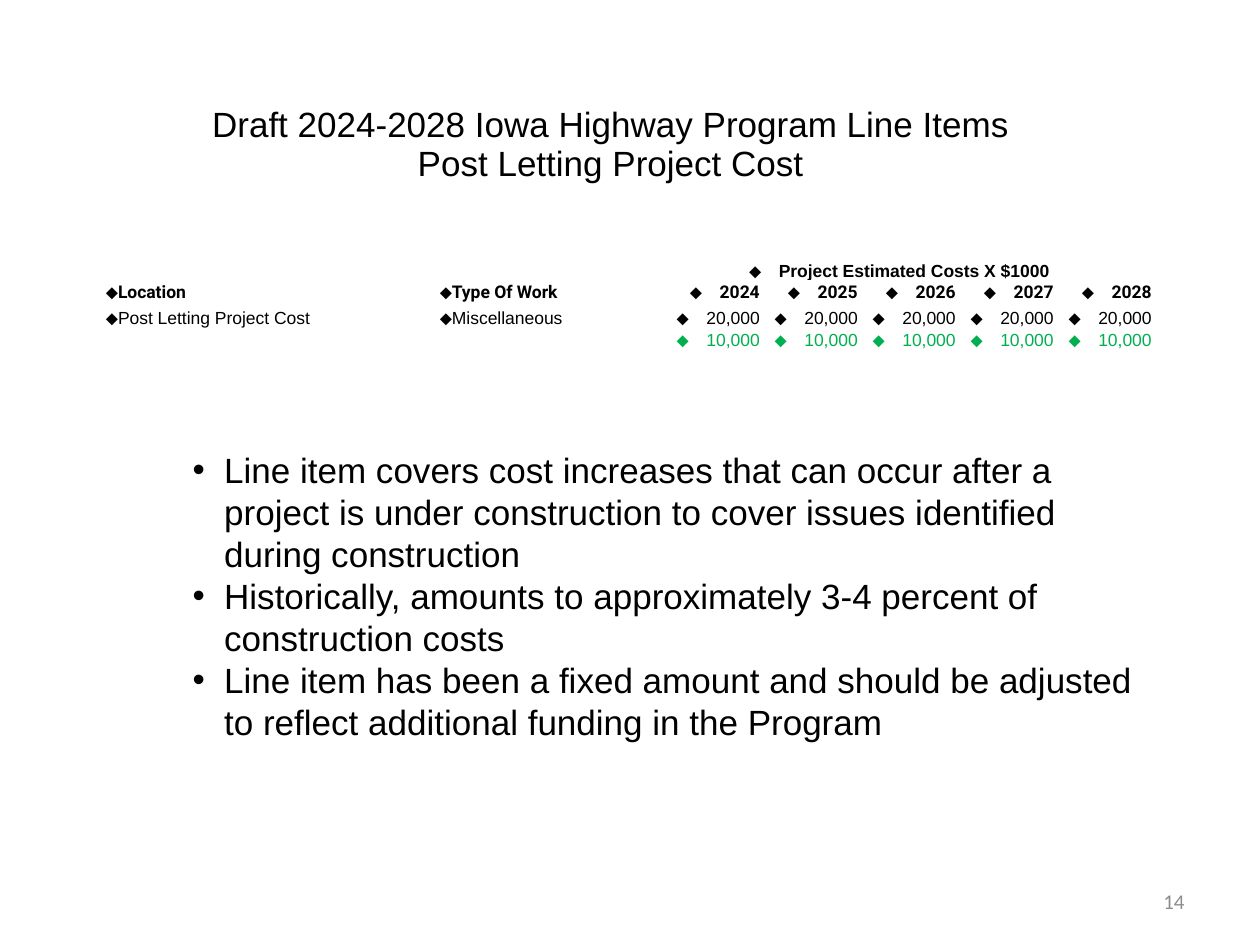
from dataclasses import dataclass
from typing import Optional

from lxml import etree
from pptx import Presentation
from pptx import util as u
from pptx.dml.color import RGBColor
from pptx.enum import text
from pptx.oxml.ns import qn

Pt = u.Pt
AL, ANC = text.PP_ALIGN, text.MSO_ANCHOR
COLORS = {"ink": "000000", "muted": "8C8C8C", "added": "00B050", "paper": "FFFFFF"}
YEARS = range(2024, 2029)


@dataclass
class Style:
    size: float
    font: str = "Arial"
    color: str = "ink"
    bold: bool = False
    align: AL = AL.LEFT
    spacing: Optional[float] = None
    before: float = 0
    bullet: str = ""
    margin: float = 0
    indent: float = 0
    level: int = 0


@dataclass
class Box:
    left: float
    top: float
    width: float
    height: float
    lines: list[str]
    style: Style
    anchor: ANC = ANC.TOP


def rgb(name: str) -> RGBColor:
    return RGBColor.from_string(COLORS[name])


def set_bullet(p, st: Style) -> None:
    """Give the paragraph its bullet character and hanging indent."""
    pPr = p._p.get_or_add_pPr()
    pPr.set("marL", str(Pt(st.margin)))
    pPr.set("indent", str(Pt(st.indent)))
    etree.SubElement(pPr, qn("a:buFont")).set("typeface", "Arial")
    etree.SubElement(pPr, qn("a:buChar")).set("char", st.bullet)


def write(p, words: str, st: Style) -> None:
    layout = {"alignment": st.align, "level": st.level,
              "line_spacing": st.spacing, "space_before": Pt(st.before)}
    for name, value in layout.items():
        setattr(p, name, value)
    if st.bullet:
        set_bullet(p, st)
    r = p.add_run()
    r.text = words
    for name, value in {"size": Pt(st.size), "name": st.font, "bold": st.bold}.items():
        setattr(r.font, name, value)
    r.font.color.rgb = rgb(st.color)


def add_box(s, box: Box) -> None:
    sp = s.shapes.add_textbox(Pt(box.left), Pt(box.top), Pt(box.width), Pt(box.height))
    tf = sp.text_frame
    tf.word_wrap = True
    tf.vertical_anchor = box.anchor
    for i, line in enumerate(box.lines):
        write(tf.paragraphs[0] if i == 0 else tf.add_paragraph(), line, box.style)


def cell_style(row: int, col: int) -> Style:
    st = Style(10, before=2, bullet="⬥", bold=row < 2)
    st.align = AL.CENTER if row == 0 else AL.RIGHT if col > 1 else AL.LEFT
    st.indent = -17 if col > 1 else 0
    st.font = "Roboto" if row == 1 else "Arial"
    st.color = "added" if row == 3 else "ink"
    return st


def add_cost_table(s) -> None:
    n = len(YEARS)
    rows = [
        ["", "", "Project Estimated Costs X $1000"] + [""] * (n - 1),
        ["Location", "Type Of Work"] + [str(y) for y in YEARS],
        ["Post Letting Project Cost", "Miscellaneous"] + ["20,000"] * n,
        ["", ""] + ["10,000"] * n,
    ]
    widths = [190.8, 128.2] + [56] * n
    heights = [15.1, 15.1, 11.5, 15.1]
    tbl = s.shapes.add_table(len(rows), len(widths), Pt(59.8), Pt(145.4),
                             Pt(sum(widths)), Pt(sum(heights))).table
    tbl.first_row = tbl.horz_banding = False
    for column, width in zip(tbl.columns, widths):
        column.width = Pt(width)
    for row, height in zip(tbl.rows, heights):
        row.height = Pt(height)
    tbl.cell(0, 2).merge(tbl.cell(0, n + 1))
    for i, row in enumerate(rows):
        for j, words in enumerate(row):
            cell = tbl.cell(i, j)
            margins = {"margin_left": 0.7, "margin_right": 0.7, "margin_top": 0.7,
                       "margin_bottom": 0}
            for name, value in margins.items():
                setattr(cell, name, Pt(value))
            if i == 1:
                cell.fill.solid()
                cell.fill.fore_color.rgb = rgb("paper")
            else:
                cell.fill.background()
            p = cell.text_frame.paragraphs[0]
            if words:
                cell.vertical_anchor = ANC.BOTTOM if i == 0 else ANC.TOP
                write(p, words, cell_style(i, j))
            else:
                etree.SubElement(p._p, qn("a:endParaRPr")).set("sz", "1000")


BOXES = [
    Box(516, 500.4, 168, 28.8, ["14"],
        Style(12, "Calibri", "muted", align=AL.RIGHT), ANC.MIDDLE),
    Box(-11, 65.5, 720, 69.1,
        ["Draft 2024-2028 Iowa Highway Program Line Items", "Post Letting Project Cost"],
        Style(20, align=AL.CENTER, spacing=0.5, before=10.5)),
    Box(67, 252.7, 589.7, 200.9,
        ["Line item covers cost increases that can occur after a project is under "
         "construction to cover issues identified during construction",
         "Historically, amounts to approximately 3-4 percent of construction costs",
         "Line item has been a fixed amount and should be adjusted to reflect "
         "additional funding in the Program"],
        Style(20, bullet="•", margin=54, indent=-18, level=1)),
]


def main() -> None:
    prs = Presentation()
    prs.slide_width, prs.slide_height = Pt(720), Pt(540)
    s = prs.slides.add_slide(prs.slide_layouts[6])
    for box in BOXES:
        add_box(s, box)
    add_cost_table(s)
    prs.save("out.pptx")


if __name__ == "__main__":
    main()
